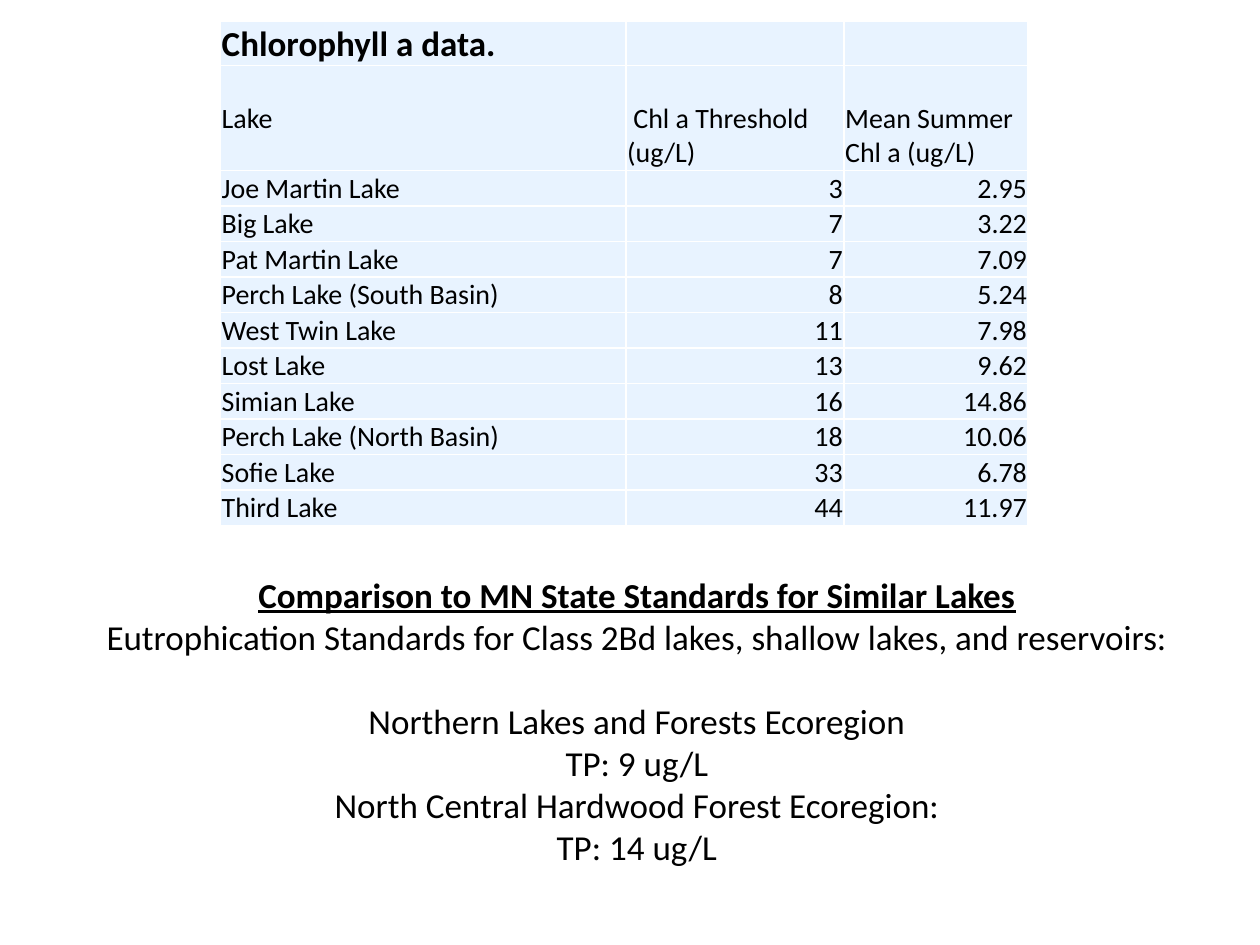
from lxml.etree import SubElement
from pptx import Presentation
from pptx.dml.color import RGBColor
from pptx.enum.text import MSO_ANCHOR as ANCHOR, MSO_AUTO_SIZE as AUTO_SIZE, PP_ALIGN as ALIGN
from pptx.oxml.ns import qn
from pptx.util import Inches, Pt

WIDTH, HEIGHT = 10, 7.5
COL_SHARES = [0.502, 0.27, 0.228]
ROW_UNITS = [1, 3] + [1] * 10
TOTAL_UNITS = 14.25
TITLE = "Chlorophyll a data."
HEADERS = ["Lake", " Chl a Threshold (ug/L)", "Mean Summer Chl a (ug/L)"]
LAKES = [
    ("Joe Martin Lake", 3, 2.95),
    ("Big Lake", 7, 3.22),
    ("Pat Martin Lake", 7, 7.09),
    ("Perch Lake (South Basin)", 8, 5.24),
    ("West Twin Lake", 11, 7.98),
    ("Lost Lake", 13, 9.62),
    ("Simian Lake", 16, 14.86),
    ("Perch Lake (North Basin)", 18, 10.06),
    ("Sofie Lake", 33, 6.78),
    ("Third Lake", 44, 11.97),
]
STANDARDS = [
    "Eutrophication Standards for Class 2Bd lakes, shallow lakes, and reservoirs:",
    "Northern Lakes and Forests Ecoregion",
    "TP: 9 ug/L",
    "North Central Hardwood Forest Ecoregion:",
    "TP: 14 ug/L",
]


def rgb(value):
    return RGBColor.from_string(value)


def add_run(p, text, size, bold=False, underline=False):
    r = p.add_run()
    r.text = text
    r.font.name = "Calibri"
    r.font.size = Pt(size)
    r.font.bold = bold
    r.font.underline = underline
    r.font.color.rgb = rgb("000000")


def add_borders(cell, color):
    props = cell._tc.get_or_add_tcPr()
    for i, side in enumerate(("a:lnL", "a:lnR", "a:lnT", "a:lnB")):
        line = props.makeelement(qn(side), {"w": str(Pt(1))})
        fill = SubElement(line, qn("a:solidFill"))
        SubElement(fill, qn("a:srgbClr"), val=color)
        props.insert(i, line)


def fill_cell(cell, value, size, bold, anchor):
    cell.fill.solid()
    cell.fill.fore_color.rgb = rgb("E8F3FF")
    add_borders(cell, "FFFFFF")
    cell.margin_left = cell.margin_right = cell.margin_top = Inches(0.01)
    cell.margin_bottom = 0
    cell.vertical_anchor = anchor
    p = cell.text_frame.paragraphs[0]
    if value == "":
        p.font.size = Pt(size)
        return
    if isinstance(value, (int, float)):
        p.alignment = ALIGN.RIGHT
    add_run(p, str(value), size, bold)


def lake_table(s, x, y, w, h):
    rows = [(TITLE, "", ""), HEADERS, *LAKES]
    frame = s.shapes.add_table(len(rows), len(HEADERS), Inches(x), Inches(y), Inches(w), Inches(h))
    table = frame.table
    table.first_row = table.horz_banding = False
    for col, share in zip(table.columns, COL_SHARES):
        col.width = Inches(w * share)
    for row, units in zip(table.rows, ROW_UNITS):
        row.height = Inches(h * units / TOTAL_UNITS)
    for i, values in enumerate(rows):
        for j, value in enumerate(values):
            anchor = ANCHOR.MIDDLE if value == "Lake" else ANCHOR.BOTTOM
            fill_cell(table.cell(i, j), value, 20 if i == 0 else 16, i == 0, anchor)


def standards_text(s, x, y, w, h):
    sp = s.shapes.add_textbox(Inches(x), Inches(y), Inches(w), Inches(h))
    tf = sp.text_frame
    tf.word_wrap = True
    tf.auto_size = AUTO_SIZE.SHAPE_TO_FIT_TEXT
    p = tf.paragraphs[0]
    p.alignment = ALIGN.CENTER
    add_run(p, "Comparison to MN State Standards for Similar Lakes", 20, True, True)
    for i, text in enumerate(STANDARDS):
        p = tf.add_paragraph()
        p.alignment = ALIGN.CENTER
        if i == 1:
            p.space_before = Pt(24)
        add_run(p, text, 20)


def main():
    prs = Presentation()
    prs.slide_width, prs.slide_height = Inches(WIDTH), Inches(HEIGHT)
    s = prs.slides.add_slide(prs.slide_layouts[6])
    lake_table(s, WIDTH * 0.175, 0.17, 6.41, 3.95)
    standards_text(s, 0, HEIGHT * 0.6, 10.11, 2.46)
    prs.save("out.pptx")


if __name__ == "__main__":
    main()
